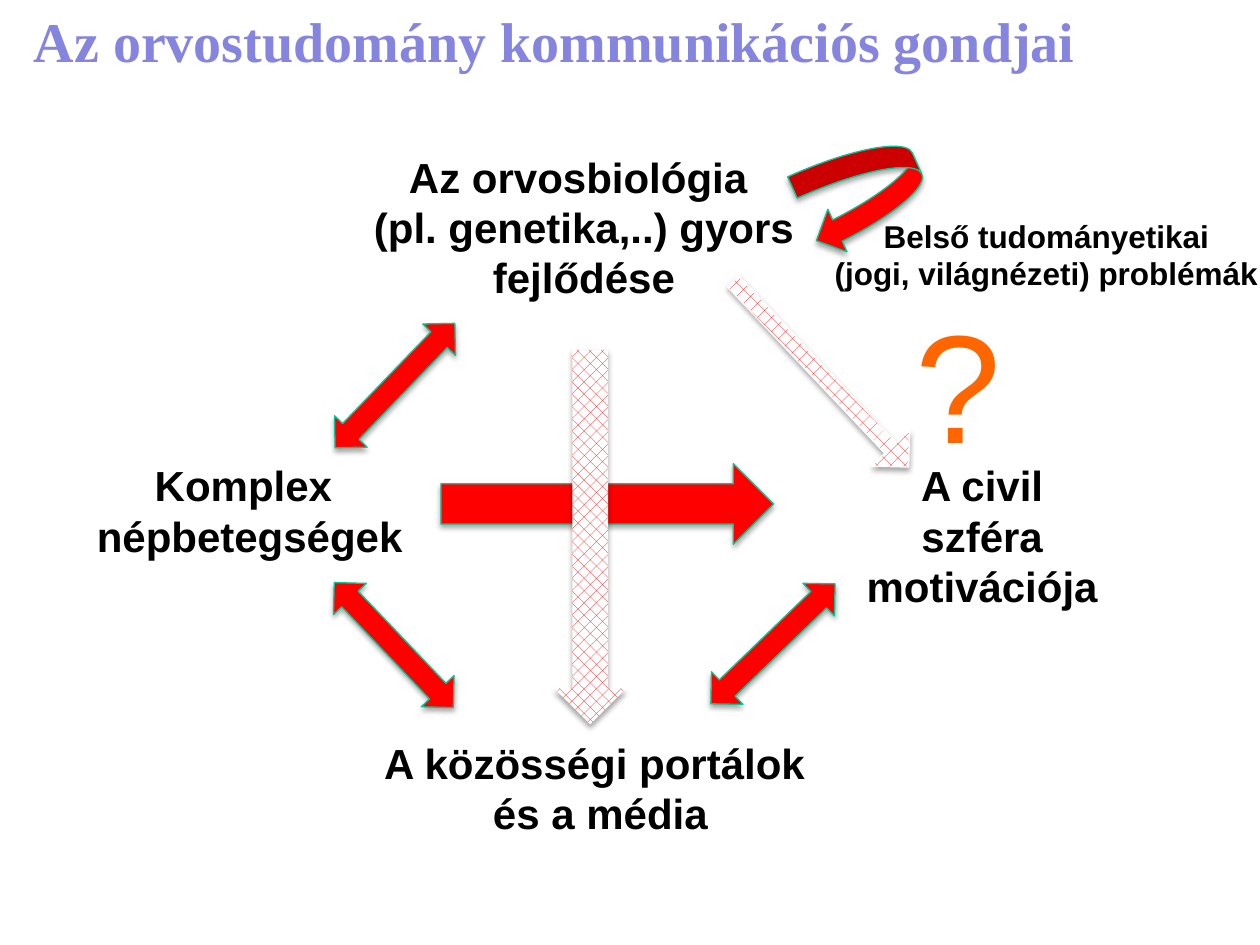
import lxml.etree
import pptx
import pptx.dml.color
import pptx.enum.dml
import pptx.enum.shapes
import pptx.enum.text
import pptx.oxml
import pptx.oxml.ns
import pptx.util


class Theme:
    black = "000000"
    white = "FFFFFF"
    red = "FF0000"
    green = "00C896"
    lavender = "8585E0"
    orange = "FF6600"
    body_font = "Arial"
    title_font = "Times New Roman"
    title_size = 32
    body_size = 24
    note_size = 18
    mark_size = 88
    line_width = 0.75


COLUMNS, ROWS = 100, 75
Shape = pptx.enum.shapes.MSO_SHAPE
Pattern = pptx.enum.dml.MSO_PATTERN
Align = pptx.enum.text.PP_ALIGN
color = pptx.dml.color.RGBColor.from_string

presentation = pptx.Presentation()
presentation.slide_width = pptx.util.Inches(10)
presentation.slide_height = pptx.util.Inches(7.5)
slide = presentation.slides.add_slide(presentation.slide_layouts[6])
column = presentation.slide_width / COLUMNS
row = presentation.slide_height / ROWS


def add_text(lines, area, size=Theme.body_size, font=Theme.body_font, fill=Theme.black,
             bold=True, align=Align.CENTER, wrap=True, first_indent=0):
    left, top, width, height = area
    box = slide.shapes.add_textbox(int(left * column), int(top * row),
                                   int(width * column), int(height * row))
    frame = box.text_frame
    frame.word_wrap = wrap
    frame.auto_size = pptx.enum.text.MSO_AUTO_SIZE.SHAPE_TO_FIT_TEXT
    frame.text = "\n".join(lines)
    for paragraph in frame.paragraphs:
        paragraph.alignment = align
        paragraph.font.size = pptx.util.Pt(size)
        paragraph.font.name = font
        paragraph.font.bold = bold
        paragraph.font.color.rgb = color(fill)
    if first_indent:
        properties = frame.paragraphs[0]._p.get_or_add_pPr()
        properties.set("marL", str(int(first_indent * column)))


def add_arrow(kind, area, rotation=0, pattern=None, outline=Theme.green, adjustments=()):
    left, top, width, height = area
    shape = slide.shapes.add_shape(kind, int(left * column), int(top * row),
                                   int(width * column), int(height * row))
    shape.rotation = rotation
    for index, value in enumerate(adjustments):
        shape.adjustments[index] = value
    if pattern:
        shape.fill.patterned()
        shape.fill.pattern = pattern
        shape.fill.fore_color.rgb = color(Theme.red)
        shape.fill.back_color.rgb = color(Theme.white)
    else:
        shape.fill.solid()
        shape.fill.fore_color.rgb = color(Theme.red)
    if outline:
        shape.line.color.rgb = color(outline)
        shape.line.width = pptx.util.Pt(Theme.line_width)
    else:
        shape.line.fill.background()
    shape.shadow.inherit = False
    effects = shape._element.spPr.find(pptx.oxml.ns.qn("a:effectLst"))
    effects.append(pptx.oxml.parse_xml(
        f'<a:outerShdw {pptx.oxml.ns.nsdecls("a")} blurRad="40000" dist="23000" '
        f'dir="5400000" rotWithShape="0"><a:srgbClr val="{Theme.black}">'
        '<a:alpha val="35000"/></a:srgbClr></a:outerShdw>'))


add_text(["A közösségi portálok ", "és a média"], (15.6, 58, 64.1, 9.1))
add_text(["Az orvosbiológia ", "(pl. genetika,..) gyors fejlődése"], (21.2, 11.5, 50.3, 13.1))
add_text(["Komplex", "népbetegségek"], (6.7, 36, 49.7, 9.1), align=Align.LEFT, first_indent=4.6)
add_text(["A civil szféra", "motivációja"], (67.6, 36, 20.7, 13.1))

for left, top, rotation in [(24.5, 28.8, 313.9), (54.5, 49.3, 316), (24.4, 49.4, 46.4)]:
    add_arrow(Shape.LEFT_RIGHT_ARROW, (left, top, 13.7, 3.6), rotation)
add_arrow(Shape.RIGHT_ARROW, (35, 36.8, 26.4, 6.4))
add_arrow(Shape.DOWN_ARROW, (44, 27.8, 5.7, 29.7), pattern=Pattern.PERCENT_30, outline=None)
add_arrow(Shape.CURVED_LEFT_ARROW, (63.6, 11.7, 9.8, 7.4), 335.8)

add_text(["Belső tudományetikai", "(jogi, világnézeti) problémák"], (65, 16.7, 36.1, 7.1),
         size=Theme.note_size, wrap=False)
add_arrow(Shape.RIGHT_ARROW, (55, 27.6, 20.3, 4.2), 46.6, pattern=Pattern.PERCENT_25,
          outline=Theme.white, adjustments=(0.3, 0.5))
add_text(["Az orvostudomány kommunikációs gondjai"], (1.7, 0, 94.8, 6.4), size=Theme.title_size,
         font=Theme.title_font, fill=Theme.lavender, align=Align.LEFT, wrap=False)
add_text(["?"], (71.7, 22.5, 8.9, 15.8), size=Theme.mark_size, fill=Theme.orange,
         bold=False, align=Align.LEFT, wrap=False)

presentation.save("out.pptx")
